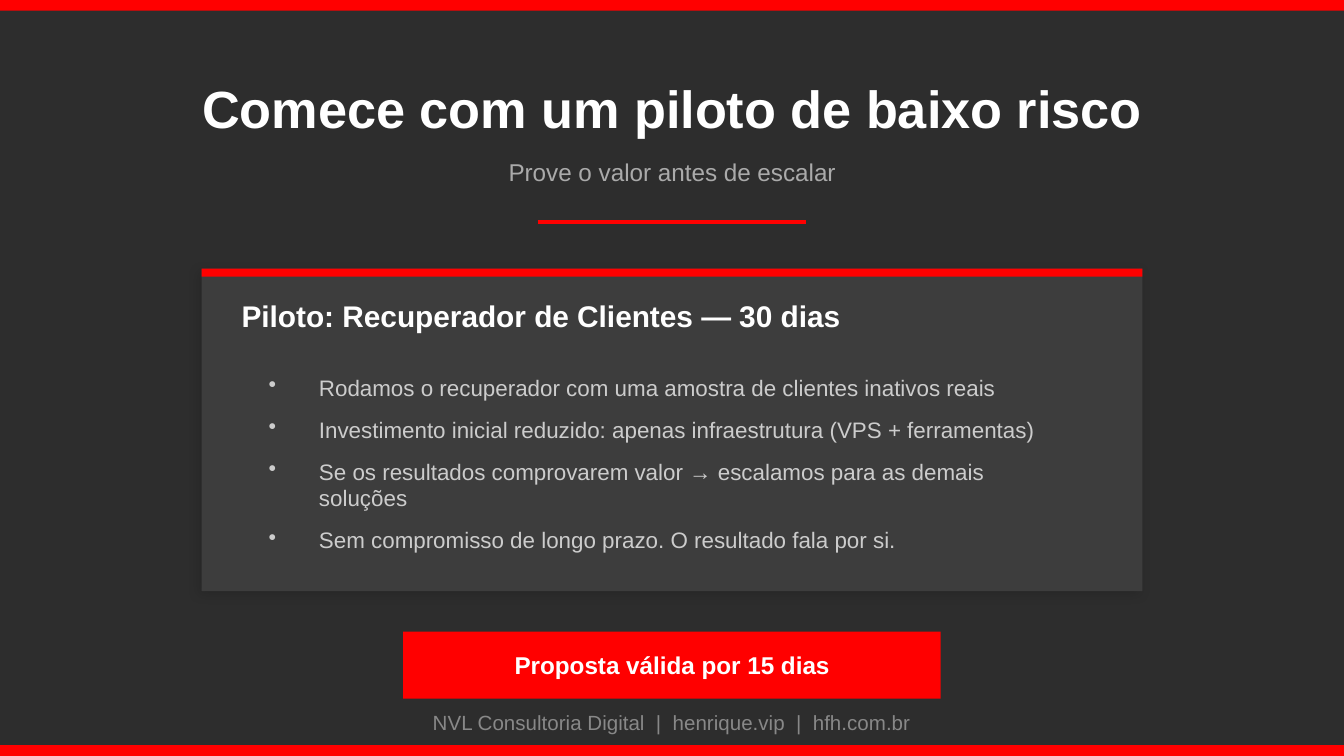
"""Build the closing slide that offers a low-risk pilot."""
from lxml.etree import SubElement
from pptx import Presentation
from pptx.dml.color import RGBColor
from pptx.enum.shapes import MSO_CONNECTOR, MSO_SHAPE
from pptx.enum.text import MSO_ANCHOR, PP_ALIGN
from pptx.oxml.ns import qn
from pptx.util import Inches, Pt

COLUMNS, ROWS = 100, 56.25
CELL = Inches(0.1)
BAND = 0.8
FONT = "Arial"

DARK = RGBColor(0x2D, 0x2D, 0x2D)
CARD = RGBColor(0x3D, 0x3D, 0x3D)
RED = RGBColor(0xFF, 0x00, 0x00)
WHITE = RGBColor(0xFF, 0xFF, 0xFF)
SILVER = RGBColor(0xCC, 0xCC, 0xCC)
GRAY = RGBColor(0xAA, 0xAA, 0xAA)
DIM = RGBColor(0x88, 0x88, 0x88)

PILOT_TERMS = [
    "Rodamos o recuperador com uma amostra de clientes inativos reais",
    "Investimento inicial reduzido: apenas infraestrutura (VPS + ferramentas)",
    "Se os resultados comprovarem valor → escalamos para as demais soluções",
    "Sem compromisso de longo prazo. O resultado fala por si.",
]


def grid(*cells):
    """Convert grid cells to slide lengths."""
    return [round(cell * CELL) for cell in cells]


def centered(top, width, height):
    """Return the grid area of an element centred across the slide."""
    return (COLUMNS - width) / 2, top, width, height


def add_block(slide, area, color):
    """Add a plain filled rectangle."""
    block = slide.shapes.add_shape(MSO_SHAPE.RECTANGLE, *grid(*area))
    block.shadow.inherit = False
    block.fill.solid()
    block.fill.fore_color.rgb = color
    block.line.fill.background()
    return block


def add_soft_shadow(block):
    """Give a block a faint outer shadow."""
    effects = block._element.spPr.find(qn("a:effectLst"))
    shadow = SubElement(effects, qn("a:outerShdw"), blurRad=str(Pt(6)),
                        dist=str(Pt(2)), dir=str(135 * 60000),
                        algn="bl", rotWithShape="0")
    tint = SubElement(shadow, qn("a:srgbClr"), val="000000")
    SubElement(tint, qn("a:alpha"), val="12000")


def write(holder, lines, size, color, bold=False, align=PP_ALIGN.CENTER):
    """Write lines into a shape and format them alike."""
    frame = holder.text_frame
    frame.word_wrap = True
    frame.vertical_anchor = MSO_ANCHOR.MIDDLE
    frame.text = "\n".join(lines)
    for paragraph in frame.paragraphs:
        paragraph.alignment = align
        for run in paragraph.runs:
            run.font.name = FONT
            run.font.size = Pt(size)
            run.font.bold = bold
            run.font.color.rgb = color


def add_text(slide, area, lines, size, color, **style):
    """Add a text box."""
    box = slide.shapes.add_textbox(*grid(*area))
    write(box, lines, size, color, **style)
    return box


def add_bullets(box):
    """Turn the paragraphs of a box into a spaced bullet list."""
    indent = Pt(27)
    for paragraph in box.text_frame.paragraphs:
        properties = paragraph._p.get_or_add_pPr()
        properties.set("marL", str(indent))
        properties.set("indent", str(-indent))
        SubElement(properties, qn("a:buSzPct"), val="100000")
        SubElement(properties, qn("a:buChar"), char="•")
        paragraph.space_after = Pt(8)


def add_divider(slide, row, width):
    """Add a centred red rule."""
    left = (COLUMNS - width) / 2
    divider = slide.shapes.add_connector(
        MSO_CONNECTOR.STRAIGHT, *grid(left, row, left + width, row))
    divider.line.color.rgb = RED
    divider.line.width = Pt(2)
    SubElement(divider._element.spPr, qn("a:effectLst"))


def add_pilot_card(slide):
    """Add the card that describes the pilot."""
    card = add_block(slide, centered(20, 70, 24), CARD)
    add_soft_shadow(card)
    add_block(slide, centered(20, 70, 0.6), RED)
    add_text(slide, centered(21.5, 66, 4),
             ["Piloto: Recuperador de Clientes — 30 dias"],
             16, WHITE, bold=True, align=PP_ALIGN.LEFT)
    terms = add_text(slide, centered(26.5, 62, 16), PILOT_TERMS,
                     12, SILVER, align=PP_ALIGN.LEFT)
    add_bullets(terms)


def main():
    """Build and save the slide."""
    deck = Presentation()
    deck.slide_width, deck.slide_height = grid(COLUMNS, ROWS)
    slide = deck.slides.add_slide(deck.slide_layouts[6])
    slide.background.fill.solid()
    slide.background.fill.fore_color.rgb = DARK

    add_block(slide, (0, 0, COLUMNS, BAND), RED)
    add_text(slide, centered(5, 84, 6),
             ["Comece com um piloto de baixo risco"], 28, WHITE, bold=True)
    add_text(slide, centered(11, 84, 3.5),
             ["Prove o valor antes de escalar"], 13, GRAY)
    add_divider(slide, 16.5, 20)
    add_pilot_card(slide)
    offer = add_block(slide, centered(47, 40, 5), RED)
    write(offer, ["Proposta válida por 15 dias"], 13, WHITE, bold=True)
    add_text(slide, centered(52.5, 84, 2.5),
             ["NVL Consultoria Digital  |  henrique.vip  |  hfh.com.br"],
             11, DIM)
    add_block(slide, (0, ROWS - BAND, COLUMNS, BAND), RED)

    deck.save("out.pptx")


if __name__ == "__main__":
    main()
